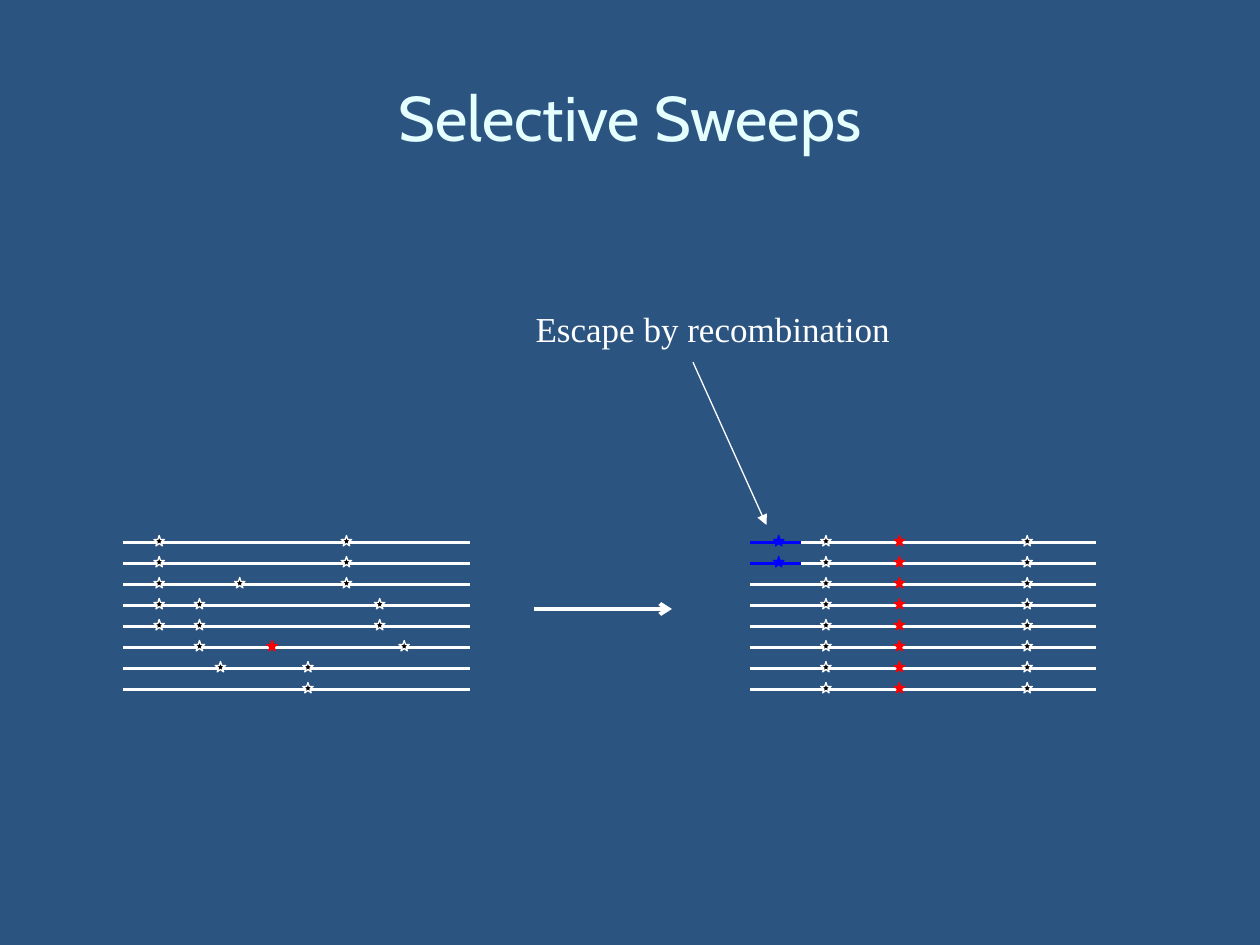
from dataclasses import dataclass

import pptx
import pptx.dml.color
import pptx.enum.shapes
import pptx.enum.text
import pptx.oxml
import pptx.oxml.ns
import pptx.util

Pt = pptx.util.Pt
RGB = pptx.dml.color.RGBColor.from_string


@dataclass(frozen=True)
class Theme:
    background = RGB("2B5481")
    title = RGB("E5FFFF")
    white = RGB("FFFFFF")
    neutral = RGB("000000")
    selected = RGB("FF0000")
    recombined = RGB("0000FF")
    title_font = "Cabin"
    label_font = "Times New Roman"
    title_size = Pt(36)
    label_size = Pt(20)


THEME = Theme()
ROW_COUNT = 8
ROW_GAP = 12
FIRST_ROW = 310
CHROMOSOME_LENGTH = 198
STAR_SIZE = 6
STAR_RISE = 4
BEFORE_LEFT = 70.5
AFTER_LEFT = 428.5

BEFORE_NEUTRAL = {
    88: range(0, 5),
    111: range(3, 6),
    134: [2],
    123: [6],
    173: [6, 7],
    195: range(0, 3),
    214: [3, 4],
    228: [5],
}
BEFORE_SELECTED = {152.5: [5]}
AFTER_NEUTRAL = {469: range(ROW_COUNT), 584: range(ROW_COUNT)}
AFTER_SELECTED = {511: range(ROW_COUNT)}
AFTER_RECOMBINED = {442: [0, 1]}


def row_y(row):
    return FIRST_ROW + row * ROW_GAP


def add_line(shapes, start, end, color, width, arrowhead=None):
    line = shapes.add_connector(
        pptx.enum.shapes.MSO_CONNECTOR.STRAIGHT,
        Pt(start[0]), Pt(start[1]), Pt(end[0]), Pt(end[1]),
    )
    line.line.color.rgb = color
    line.line.width = Pt(width)
    if arrowhead:
        outline = line.line._get_or_add_ln()
        tail = pptx.oxml.parse_xml(
            f'<a:tailEnd {pptx.oxml.ns.nsdecls("a")} type="{arrowhead}"/>'
        )
        outline.append(tail)
    properties = line._element.spPr
    properties.append(
        pptx.oxml.parse_xml(f'<a:effectLst {pptx.oxml.ns.nsdecls("a")}/>')
    )


def add_chromosomes(shapes, left, rows, length, color):
    for row in rows:
        y = row_y(row)
        add_line(shapes, (left, y), (left + length, y), color, 1.5)


def add_mutations(shapes, columns, fill, outline):
    for left, rows in columns.items():
        for row in rows:
            star = shapes.add_shape(
                pptx.enum.shapes.MSO_SHAPE.STAR_5_POINT,
                Pt(left), Pt(row_y(row) - STAR_RISE), Pt(STAR_SIZE), Pt(STAR_SIZE),
            )
            star.shadow.inherit = False
            star.fill.solid()
            star.fill.fore_color.rgb = fill
            star.line.color.rgb = outline
            star.line.width = Pt(0.75)


def add_text(shapes, text, left, top, width, height, font, size, color):
    box = shapes.add_textbox(Pt(left), Pt(top), Pt(width), Pt(height))
    box.text_frame.word_wrap = True
    paragraph = box.text_frame.paragraphs[0]
    paragraph.text = text
    paragraph.font.name = font
    paragraph.font.size = size
    paragraph.font.color.rgb = color
    return box.text_frame


def add_population_before(slide):
    shapes = slide.shapes.add_group_shape().shapes
    add_chromosomes(shapes, BEFORE_LEFT, range(ROW_COUNT), CHROMOSOME_LENGTH, THEME.white)
    add_mutations(shapes, BEFORE_NEUTRAL, THEME.neutral, THEME.white)
    add_mutations(shapes, BEFORE_SELECTED, THEME.selected, THEME.selected)


def add_population_after(slide):
    shapes = slide.shapes
    add_chromosomes(shapes, AFTER_LEFT, range(ROW_COUNT), CHROMOSOME_LENGTH, THEME.white)
    add_mutations(shapes, AFTER_NEUTRAL, THEME.neutral, THEME.white)
    add_mutations(shapes, AFTER_SELECTED, THEME.selected, THEME.selected)
    add_mutations(shapes, AFTER_RECOMBINED, THEME.recombined, THEME.recombined)
    add_chromosomes(shapes, AFTER_LEFT, [0, 1], 29.5, THEME.recombined)


def main():
    presentation = pptx.Presentation()
    presentation.slide_width = Pt(720)
    presentation.slide_height = Pt(540)
    slide = presentation.slides.add_slide(presentation.slide_layouts[6])
    slide.background.fill.solid()
    slide.background.fill.fore_color.rgb = THEME.background

    add_population_before(slide)
    add_line(slide.shapes, (305, 348), (384, 348), THEME.white, 2.25, "arrow")
    add_line(slide.shapes, (396, 207), (438, 300), THEME.white, 0.75, "triangle")
    label = add_text(
        slide.shapes, "Escape by recombination", 299, 172, 297, 31,
        THEME.label_font, THEME.label_size, THEME.white,
    )
    label.auto_size = pptx.enum.text.MSO_AUTO_SIZE.SHAPE_TO_FIT_TEXT
    add_population_after(slide)
    title = add_text(
        slide.shapes, "Selective Sweeps", 36, 21.6, 648, 90,
        THEME.title_font, THEME.title_size, THEME.title,
    )
    title.vertical_anchor = pptx.enum.text.MSO_ANCHOR.MIDDLE
    title.paragraphs[0].alignment = pptx.enum.text.PP_ALIGN.CENTER

    presentation.save("out.pptx")


if __name__ == "__main__":
    main()
